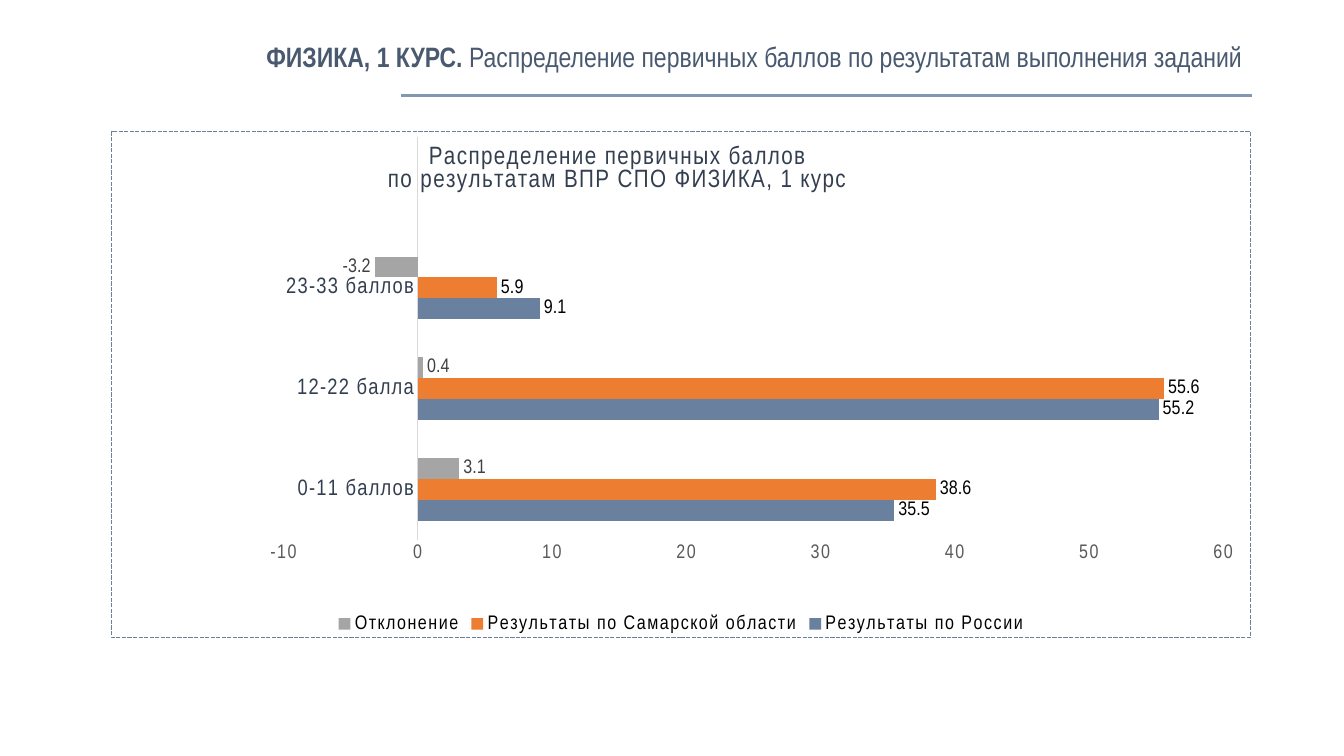
import pptx
import pptx.chart.data
import pptx.dml.color
import pptx.enum.chart
import pptx.enum.dml
import pptx.enum.shapes
import pptx.enum.text
import pptx.oxml
import pptx.oxml.ns
import pptx.util
from pptx.util import Inches

RGBColor = pptx.dml.color.RGBColor
HEADING = RGBColor(0x48, 0x59, 0x70)
RULE = RGBColor(0x84, 0x97, 0xB0)
NAVY = RGBColor(0x33, 0x3F, 0x50)
BLUE = RGBColor(0x69, 0x80, 0x9F)
ORANGE = RGBColor(0xED, 0x7D, 0x31)
GREY = RGBColor(0xA5, 0xA5, 0xA5)
AXIS_LINE = RGBColor(0xD9, 0xD9, 0xD9)
AXIS_TEXT = RGBColor(0x59, 0x59, 0x59)
DARK = RGBColor(0x40, 0x40, 0x40)
BLACK = RGBColor(0, 0, 0)

RANGES = ["0-11 баллов", "12-22 балла", "23-33 баллов", ""]
RESULTS = [
    ("Результаты по России", (35.5, 55.2, 9.1, None), BLUE, BLACK),
    ("Результаты по Самарской области", (38.6, 55.6, 5.9, None), ORANGE, BLACK),
    ("Отклонение", (3.1, 0.4, -3.2, None), GREY, DARK),
]
CHART_TITLE = ["Распределение первичных баллов", "по результатам ВПР СПО ФИЗИКА, 1 курс"]


class ScoreSlide:
    """Holds the text style and the slide, and adds each kind of element."""

    face = "Arial Narrow"

    def __init__(self, slide):
        self.slide = slide

    def style(self, font, size, color, bold=False, spacing=None):
        font.name, font.size, font.bold = self.face, pptx.util.Pt(size), bold
        font.color.rgb = color
        if spacing:
            font._element.set("spc", str(spacing))

    def heading(self, box, runs):
        frame = self.slide.shapes.add_textbox(*map(Inches, box)).text_frame
        frame.word_wrap = True
        frame.vertical_anchor = pptx.enum.text.MSO_ANCHOR.MIDDLE
        line = frame.paragraphs[0]
        line.alignment = pptx.enum.text.PP_ALIGN.RIGHT
        line.line_spacing = 0.9
        for text, bold in runs:
            run = line.add_run()
            run.text = text
            self.style(run.font, 20, HEADING, bold)

    def rule(self, left, right, y):
        line = self.slide.shapes.add_connector(
            pptx.enum.shapes.MSO_CONNECTOR.STRAIGHT, *map(Inches, (left, y, right, y)))
        line.line.color.rgb = RULE
        line.line.width = pptx.util.Pt(2.25)
        line._element.spPr.append(pptx.oxml.parse_xml(
            f"<a:effectLst {pptx.oxml.ns.nsdecls('a')}/>"))

    def layout(self, parent, index, **places):
        for old in parent.findall(pptx.oxml.ns.qn("c:layout")):
            parent.remove(old)
        parts = "".join(f'<c:{tag} val="{value}"/>' for tag, value in places.items())
        parent.insert(index, pptx.oxml.parse_xml(
            f"<c:layout {pptx.oxml.ns.nsdecls('c')}>"
            f"<c:manualLayout>{parts}</c:manualLayout></c:layout>"))

    def chart_title(self, chart, lines):
        title = chart.chart_title
        frame = title.text_frame
        for number, text in enumerate(lines):
            line = frame.add_paragraph() if number else frame.paragraphs[0]
            line.alignment = pptx.enum.text.PP_ALIGN.CENTER
            line.line_spacing = 0.8
            run = line.add_run()
            run.text = text
            self.style(run.font, 18, NAVY, spacing=100)
        self.layout(title._element, 1, xMode="edge", yMode="edge", x=0.24, y=0.02)

    def axis(self, axis, size, color):
        axis.has_major_gridlines = False
        axis.major_tick_mark = pptx.enum.chart.XL_TICK_MARK.NONE
        axis.minor_tick_mark = pptx.enum.chart.XL_TICK_MARK.NONE
        self.style(axis.tick_labels.font, size, color, spacing=100)

    def border(self, chart):
        space = chart._chartSpace
        outline = pptx.oxml.parse_xml(
            f"<c:spPr {pptx.oxml.ns.nsdecls('c', 'a')}><a:noFill/>"
            f'<a:ln w="12700"><a:solidFill><a:srgbClr val="{BLUE}"/></a:solidFill>'
            '<a:prstDash val="sysDash"/></a:ln></c:spPr>')
        space.find(pptx.oxml.ns.qn("c:chart")).addnext(outline)

    def bars(self, box, ranges, results, title):
        data = pptx.chart.data.CategoryChartData(number_format="General")
        data.categories = ranges
        for name, values, _, _ in results:
            data.add_series(name, values)
        chart = self.slide.shapes.add_chart(
            pptx.enum.chart.XL_CHART_TYPE.BAR_CLUSTERED, *map(Inches, box), data).chart
        chart.font.name, chart.font.size = "Calibri", pptx.util.Pt(10)
        chart.font.color.rgb = BLACK
        self.chart_title(chart, title)
        self.border(chart)
        self.layout(chart._chartSpace.chart.plotArea, 0, layoutTarget="inner",
                    xMode="edge", yMode="edge", x=0.151, y=0.01, w=0.825, h=0.797)

        self.axis(chart.category_axis, 16, NAVY)
        chart.category_axis.format.line.color.rgb = AXIS_LINE
        chart.category_axis.format.line.width = pptx.util.Pt(0.75)
        self.axis(chart.value_axis, 14, AXIS_TEXT)
        chart.value_axis.format.line.fill.background()
        chart.value_axis.minimum_scale = -10
        chart.value_axis.maximum_scale = 60
        chart.value_axis.major_unit = 10

        chart.has_legend = True
        chart.legend.position = pptx.enum.chart.XL_LEGEND_POSITION.BOTTOM
        chart.legend.include_in_layout = False
        self.style(chart.legend.font, 14, BLACK, spacing=100)

        plot = chart.plots[0]
        plot.gap_width, plot.overlap, plot.vary_by_categories = 182, 0, False
        for series, (_, _, color, label_color) in zip(plot.series, results):
            series.invert_if_negative = False
            series.format.fill.solid()
            series.format.fill.fore_color.rgb = color
            labels = series.data_labels
            labels.show_value = True
            labels.position = pptx.enum.chart.XL_LABEL_POSITION.OUTSIDE_END
            self.style(labels.font, 14, label_color)


def main():
    deck = pptx.Presentation()
    deck.slide_width, deck.slide_height = Inches(13.33), Inches(7.5)
    page = ScoreSlide(deck.slides.add_slide(deck.slide_layouts[6]))
    page.heading((0.7, 0.18, 11.72, 0.8), [
        ("ФИЗИКА, 1 КУРС. ", True),
        ("Распределение первичных баллов по результатам выполнения заданий", False)])
    page.rule(3.98, 12.42, 0.95)
    page.bars((1.1, 1.3, 11.31, 5.03), RANGES, RESULTS, CHART_TITLE)
    deck.save("out.pptx")


if __name__ == "__main__":
    main()
